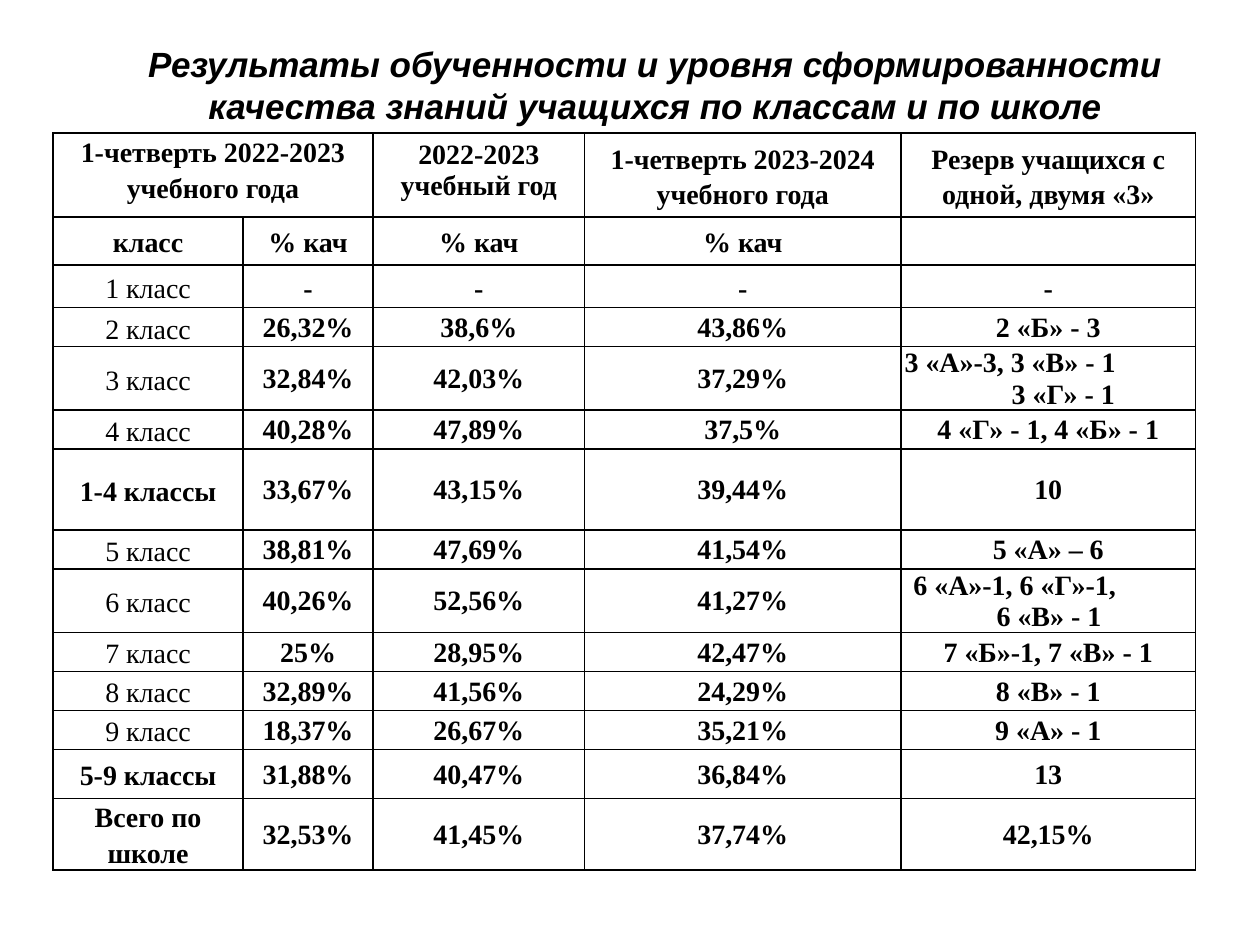
from dataclasses import dataclass

from lxml import etree
from pptx import Presentation
from pptx import util as u
from pptx.dml.color import RGBColor
from pptx.enum import text
from pptx.oxml.ns import qn

BLACK = RGBColor(0x00, 0x00, 0x00)
WIDTH, HEIGHT = u.Inches(10), u.Inches(7.5)
TABLE_FONT, TITLE_FONT = "Times New Roman", "Arial"
WIDE, NARROW = 0.07, 0.01  # side insets of cells, inches
LOOSE = 1.15  # line spacing of headings and class names
CENTER, LEFT = text.PP_ALIGN.CENTER, text.PP_ALIGN.LEFT
MIDDLE, TOP = text.MSO_ANCHOR.MIDDLE, text.MSO_ANCHOR.TOP

# Column widths, percent of the slide width
COLUMNS = (15.1, 10.3, 16.8, 25.1, 23.4)


@dataclass(frozen=True)
class ClassRow:
    name: str
    shares: tuple[str, str, str]
    reserve: str
    height: float = 4.13  # percent of the slide height
    total: bool = False
    indents: tuple[float, ...] = ()  # one per line of the reserve, inches


@dataclass(frozen=True)
class Heading:
    column: int
    label: str
    spacing: float = LOOSE
    side: float = 0.1
    top: float = 0.05


HEADINGS = (
    Heading(0, "1-четверть 2022-2023\nучебного года", side=WIDE, top=0),
    Heading(2, "2022-2023\nучебный год", spacing=1.0),
    Heading(3, "1-четверть 2023-2024 учебного года"),
    Heading(4, "Резерв учащихся с одной, двумя «3»"),
)
HEADING_HEIGHT, SUBHEADING_HEIGHT = 8.89, 5.08
SUBHEADINGS = ("класс", "% кач", "% кач", "% кач", "")

CLASS_ROWS = (
    ClassRow("1 класс", ("-", "-", "-"), "-", 4.5),
    ClassRow("2 класс", ("26,32%", "38,6%", "43,86%"), "2 «Б» - 3"),
    ClassRow("3 класс", ("32,84%", "42,03%", "37,29%"),
             "3 «А»-3, 3 «В» - 1\n3 «Г» - 1", 6.67, indents=(0.02, 0.87)),
    ClassRow("4 класс", ("40,28%", "47,89%", "37,5%"), "4 «Г» - 1, 4 «Б» - 1"),
    ClassRow("1-4 классы", ("33,67%", "43,15%", "39,44%"), "10", 8.57, total=True),
    ClassRow("5 класс", ("38,81%", "47,69%", "41,54%"), "5 «А» – 6"),
    ClassRow("6 класс", ("40,26%", "52,56%", "41,27%"),
             "6 «А»-1, 6 «Г»-1,\n6 «В» - 1", 6.67, indents=(0.09, 0.75)),
    ClassRow("7 класс", ("25%", "28,95%", "42,47%"), "7 «Б»-1, 7 «В» - 1"),
    ClassRow("8 класс", ("32,89%", "41,56%", "24,29%"), "8 «В» - 1"),
    ClassRow("9 класс", ("18,37%", "26,67%", "35,21%"), "9 «А» - 1"),
    ClassRow("5-9 классы", ("31,88%", "40,47%", "36,84%"), "13", 5.15, total=True),
    ClassRow("Всего по\nшколе", ("32,53%", "41,45%", "37,74%"), "42,15%", 7.55,
             total=True),
)


def across(percent: float) -> int:
    return round(WIDTH * percent / 100)


def down(percent: float) -> int:
    return round(HEIGHT * percent / 100)


def write(frame, content: str, *, font: str = TABLE_FONT, size: float = 16,
          bold: bool = True, italic: bool = False, spacing: float = 1.0,
          indents: tuple[float, ...] = ()) -> None:
    """Fill a text frame, one paragraph for each line of the content."""
    frame.word_wrap = True
    for number, line in enumerate(content.split("\n")):
        paragraph = frame.add_paragraph() if number else frame.paragraphs[0]
        paragraph.alignment = LEFT if indents else CENTER
        paragraph.line_spacing = spacing
        if indents:
            paragraph._p.get_or_add_pPr().set("marL", str(u.Inches(indents[number])))
        paragraph.font.size = u.Pt(size)
        if not line:
            continue
        run = paragraph.add_run()
        run.text = line
        run.font.name, run.font.size = font, u.Pt(size)
        run.font.bold, run.font.italic = bold, italic
        run.font.color.rgb = BLACK


def draw_borders(cell) -> None:
    properties = cell._tc.get_or_add_tcPr()
    for position, side in enumerate(("a:lnL", "a:lnR", "a:lnT", "a:lnB")):
        line = etree.Element(qn(side), w=str(u.Pt(1)))
        fill = etree.SubElement(line, qn("a:solidFill"))
        etree.SubElement(fill, qn("a:srgbClr"), val=str(BLACK))
        properties.insert(position, line)


def fill_cell(cell, content: str, *, side: float = WIDE, top: float = 0,
              anchor=MIDDLE, **style) -> None:
    cell.margin_left = cell.margin_right = u.Inches(side)
    cell.margin_top, cell.margin_bottom = u.Inches(top), 0
    cell.vertical_anchor = anchor
    write(cell.text_frame, content, **style)


def add_results(slide) -> None:
    heights = (HEADING_HEIGHT, SUBHEADING_HEIGHT, *(row.height for row in CLASS_ROWS))
    results = slide.shapes.add_table(
        len(heights), len(COLUMNS), across(4.2), down(14.1),
        across(sum(COLUMNS)), down(sum(heights))).table
    results.first_row = results.horz_banding = False
    for column, width in zip(results.columns, COLUMNS):
        column.width = across(width)
    for row, height in zip(results.rows, heights):
        row.height = down(height)
    for cell in results.iter_cells():
        cell.fill.background()
        draw_borders(cell)

    # Two heading rows
    results.cell(0, 0).merge(results.cell(0, 1))
    for heading in HEADINGS:
        fill_cell(results.cell(0, heading.column), heading.label, anchor=TOP,
                  side=heading.side, top=heading.top, spacing=heading.spacing)
    for column, label in enumerate(SUBHEADINGS):
        fill_cell(results.cell(1, column), label, spacing=LOOSE)

    # One row for each class or group of classes
    for number, row in enumerate(CLASS_ROWS, start=2):
        fill_cell(results.cell(number, 0), row.name, bold=row.total, spacing=LOOSE,
                  anchor=TOP if "\n" in row.name else MIDDLE)
        spacing = LOOSE if row.reserve == "-" else 1.0
        for column, share in enumerate(row.shares, start=1):
            fill_cell(results.cell(number, column), share, side=NARROW,
                      top=NARROW, spacing=spacing)
        fill_cell(results.cell(number, 4), row.reserve, side=NARROW, top=NARROW,
                  spacing=spacing, indents=row.indents)


def add_title(slide) -> None:
    title = slide.shapes.add_textbox(across(6.7), down(3.87), across(90.6), down(10.27))
    write(title.text_frame,
          "Результаты обученности и уровня сформированности "
          "качества знаний учащихся по классам и по школе",
          font=TITLE_FONT, size=20, italic=True)


def main() -> None:
    deck = Presentation()
    deck.slide_width, deck.slide_height = WIDTH, HEIGHT
    slide = deck.slides.add_slide(deck.slide_layouts[6])
    add_results(slide)
    add_title(slide)
    deck.save("out.pptx")


if __name__ == "__main__":
    main()
